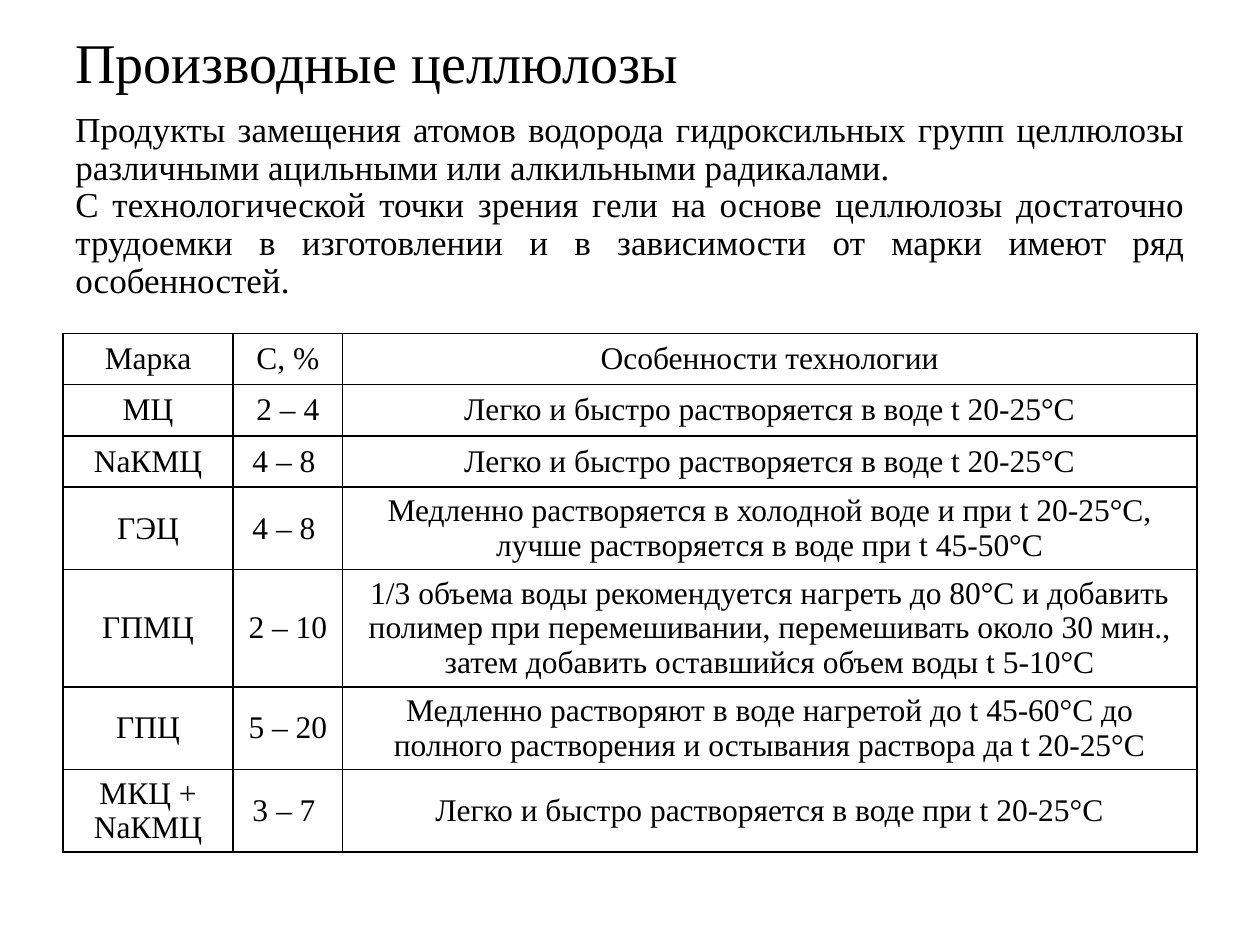
from lxml import etree
from pptx import Presentation
from pptx import util as u
from pptx.dml.color import RGBColor
from pptx.enum import text
from pptx.oxml.ns import qn

FONT = "Times New Roman"
BLACK = "000000"


def color(value):
    return RGBColor.from_string(value)


def style(paragraph, size, alignment, spacing=None):
    paragraph.alignment = alignment
    paragraph.line_spacing = spacing
    paragraph.font.name = FONT
    paragraph.font.size = u.Pt(size)
    paragraph.font.color.rgb = color(BLACK)


presentation = Presentation()
presentation.slide_width = u.Pt(720)
presentation.slide_height = u.Pt(540)
slide = presentation.slides.add_slide(presentation.slide_layouts[6])
left, width = u.Pt(36), u.Pt(648)

# Title
title = slide.shapes.add_textbox(left, u.Pt(14.5), width, u.Pt(45.5)).text_frame
title.word_wrap = True
title.vertical_anchor = text.MSO_ANCHOR.MIDDLE
title.text = "Производные целлюлозы"
style(title.paragraphs[0], 32, text.PP_ALIGN.LEFT, 0.9)

# Introduction
introduction = slide.shapes.add_textbox(left, u.Pt(60.5), width, u.Pt(430.5)).text_frame
introduction.word_wrap = True
introduction.text = (
    "Продукты замещения атомов водорода гидроксильных групп целлюлозы "
    "различными ацильными или алкильными радикалами.\n"
    "С технологической точки зрения гели на основе целлюлозы достаточно "
    "трудоемки в изготовлении и в зависимости от марки имеют ряд особенностей."
)
for paragraph in introduction.paragraphs:
    style(paragraph, 20, text.PP_ALIGN.JUSTIFY, 0.9)

# Table of cellulose grades, each row led by its number of text lines
rows = [
    (1, "Марка", "С, %", "Особенности технологии"),
    (1, "МЦ", "2 – 4", "Легко и быстро растворяется в воде t 20-25°С"),
    (1, "NaКМЦ", "4 – 8 ", "Легко и быстро растворяется в воде t 20-25°С"),
    (2, "ГЭЦ", "4 – 8 ", "Медленно растворяется в холодной воде и при t 20-25°С, "
     "лучше растворяется в воде при t 45-50°С"),
    (3, "ГПМЦ", "2 – 10 ", "1/3 объема воды рекомендуется нагреть до 80°С и добавить "
     "полимер при перемешивании, перемешивать около 30 мин., "
     "затем добавить оставшийся объем воды t 5-10°С"),
    (2, "ГПЦ", "5 – 20 ", "Медленно растворяют в воде нагретой до t 45-60°С до "
     "полного растворения и остывания раствора да t 20-25°С"),
    (2, "МКЦ + NaКМЦ", "3 – 7 ", "Легко и быстро растворяется в воде при t 20-25°С"),
]
column_widths = (97.2, 62.6, 488.2)
row_heights = {1: 29.3, 2: 47.2, 3: 67}
table_height = sum(row_heights[lines] for lines, *values in rows)
table = slide.shapes.add_table(
    len(rows), len(column_widths), left, u.Pt(190.5), width, u.Pt(table_height)
).table
table.first_row = False
table.horz_banding = False
for column, column_width in zip(table.columns, column_widths):
    column.width = u.Pt(column_width)

for row, (lines, *values) in zip(table.rows, rows):
    row.height = u.Pt(row_heights[lines])
    for cell, value in zip(row.cells, values):
        cell.text = value
        cell.vertical_anchor = text.MSO_ANCHOR.MIDDLE
        cell.margin_top = cell.margin_bottom = u.Pt(0.8)
        style(cell.text_frame.paragraphs[0], 18, text.PP_ALIGN.CENTER)
        # Borders come before the fill in the cell properties
        properties = cell._tc.get_or_add_tcPr()
        for side in ("a:lnL", "a:lnR", "a:lnT", "a:lnB"):
            line = etree.SubElement(properties, qn(side), w=str(u.Pt(1)))
            fill = etree.SubElement(line, qn("a:solidFill"))
            etree.SubElement(fill, qn("a:srgbClr"), val=BLACK)
        cell.fill.background()

presentation.save("out.pptx")
